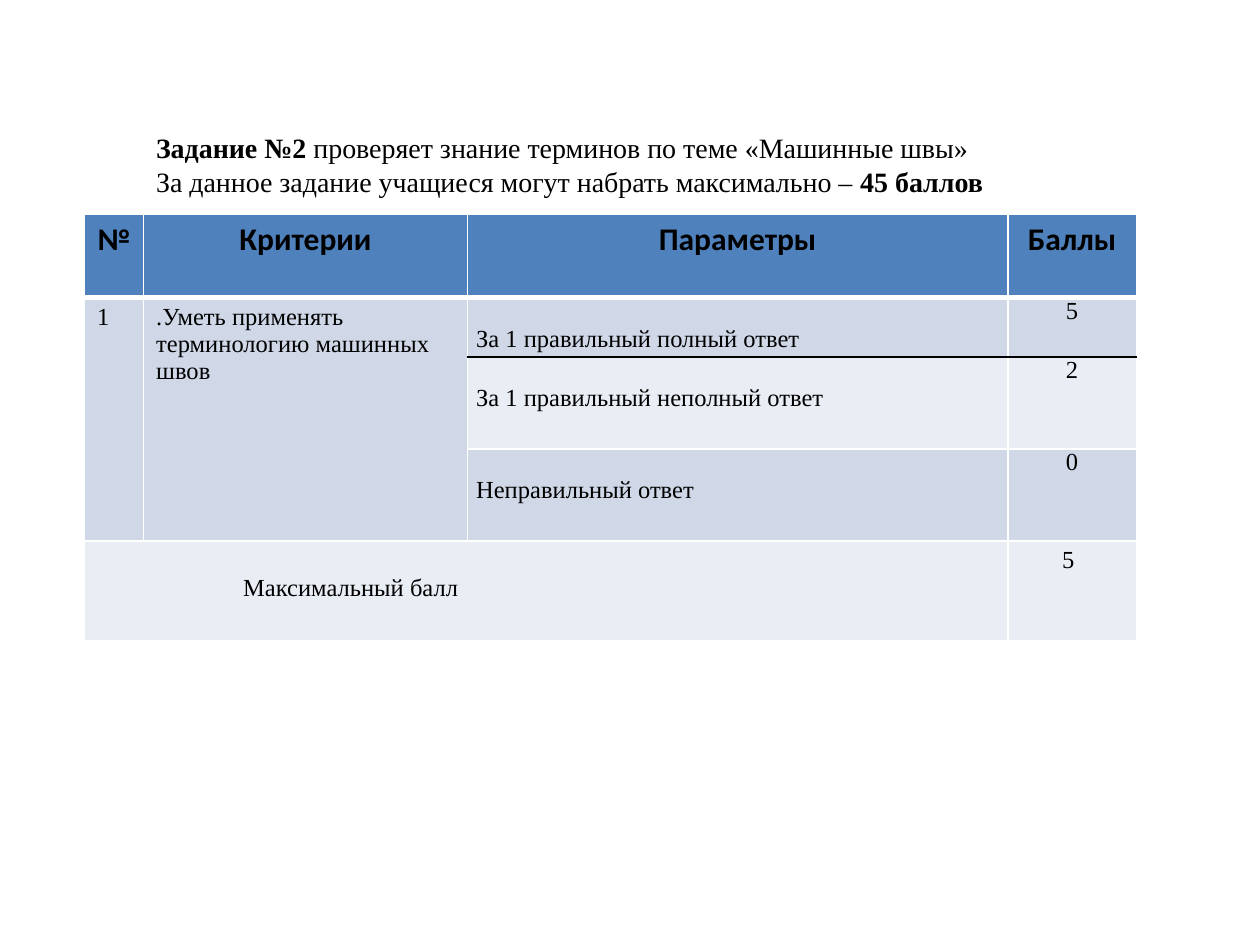
"""Build a slide with the marking scheme for task 2."""
from dataclasses import dataclass
from typing import Any

from lxml import etree
from pptx import Presentation
from pptx import util as u
from pptx.dml.color import RGBColor
from pptx.enum import text
from pptx.oxml.ns import qn


@dataclass(frozen=True)
class Theme:
    ink: str = "000000"
    line: str = "FFFFFF"
    head: str = "4F81BD"
    bands: tuple[str, str] = ("D0D8E8", "E9EDF4")
    serif: str = "Times New Roman"
    sans: str = "Calibri"
    lead: int = 16
    top: int = 18
    body: int = 14


@dataclass(frozen=True)
class Pad:
    left: float = 0.1
    top: float = 0.05
    right: float = 0.1
    base: float = 0.05


@dataclass(frozen=True)
class Item:
    row: int
    col: int
    words: str
    pad: Pad = Pad()
    mid: bool = False
    rows: int = 1
    cols: int = 1


THEME = Theme()
WIDE, HIGH = 10, 7.5
COLS = (0.47, 2.57, 4.29, 1.02)
ROWS = (0.66, 0.47, 0.73, 0.73, 0.79)
LEFT, TOP = 0.067, 0.227
DROP = Pad(0.07, 0.22, 0.07, 0)
TIGHT = Pad(0.07, 0, 0.07, 0)
HEADS = ("№", "Критерии", "Параметры", "Баллы")
MARKS = (
    ("За 1 правильный полный ответ", "5"),
    ("За 1 правильный неполный ответ", "2"),
    ("Неправильный ответ", "0"),
)
LEAD = (
    (("Задание №2", True), (" проверяет знание терминов по теме «Машинные швы»", False)),
    (("За данное задание учащиеся могут набрать максимально – ", False), ("45 баллов", True)),
)
ITEMS = (
    *(Item(0, col, words, mid=True) for col, words in enumerate(HEADS)),
    Item(1, 0, "1", rows=3),
    Item(1, 1, ".Уметь применять терминологию машинных швов", rows=3),
    *(Item(row, 2, pair[0], DROP) for row, pair in enumerate(MARKS, 1)),
    *(Item(row, 3, pair[1], TIGHT, True) for row, pair in enumerate(MARKS, 1)),
    Item(4, 0, "Максимальный балл", Pad(1.26, 0.27), cols=3),
    Item(4, 3, "5", Pad(0.43)),
)


def style(font: Any, face: str, size: int) -> None:
    """Set the face, size and ink of a font."""
    font.name, font.size = face, u.Pt(size)
    font.color.rgb = RGBColor.from_string(THEME.ink)


def edge(row: int, col: int) -> tuple[str, int]:
    """Give the colour and width of the line below a row."""
    if row == 0:
        return THEME.line, 3
    return (THEME.ink if row == 1 and col > 1 else THEME.line), 1


def rule(cell: Any, side: str, hue: str, width: int) -> None:
    """Draw one border of a cell."""
    line = etree.SubElement(cell._tc.get_or_add_tcPr(), qn(f"a:ln{side}"), w=str(u.Pt(width)))
    fill = etree.SubElement(line, qn("a:solidFill"))
    etree.SubElement(fill, qn("a:srgbClr"), val=hue)


def paint(cell: Any, row: int, col: int) -> None:
    """Give a cell its borders and fill."""
    plain = (THEME.line, 1)
    above = edge(row - 1, col) if row else plain
    for side, look in zip("LRTB", (plain, plain, above, edge(row, col))):
        rule(cell, side, *look)
    cell.fill.solid()
    hue = THEME.bands[(row - 1) % 2] if row else THEME.head
    cell.fill.fore_color.rgb = RGBColor.from_string(hue)


def write(table: Any, item: Item) -> None:
    """Put one item into its cell, merging where it spans."""
    cell = table.cell(item.row, item.col)
    if item.rows * item.cols > 1:
        cell.merge(table.cell(item.row + item.rows - 1, item.col + item.cols - 1))
    pad = item.pad
    cell.margin_left, cell.margin_top = u.Inches(pad.left), u.Inches(pad.top)
    cell.margin_right, cell.margin_bottom = u.Inches(pad.right), u.Inches(pad.base)
    cell.text = item.words
    para = cell.text_frame.paragraphs[0]
    para.alignment = text.PP_ALIGN.CENTER if item.mid else text.PP_ALIGN.LEFT
    head = item.row == 0
    style(para.font, THEME.sans if head else THEME.serif, THEME.top if head else THEME.body)
    para.font.bold = head


def intro(slide: Any) -> None:
    """Write the two lines above the table."""
    box = slide.shapes.add_textbox(
        u.Inches(0.114 * WIDE), u.Inches(0.132 * HIGH), u.Inches(0.717 * WIDE), u.Inches(0.085 * HIGH)
    )
    frame = box.text_frame
    frame.word_wrap = True
    for spot, parts in enumerate(LEAD):
        para = frame.add_paragraph() if spot else frame.paragraphs[0]
        style(para.font, THEME.serif, THEME.lead)
        for words, bold in parts:
            run = para.add_run()
            run.text, run.font.bold = words, bold


def grid(slide: Any) -> None:
    """Build the table of criteria and marks."""
    table = slide.shapes.add_table(
        len(ROWS), len(COLS), u.Inches(LEFT * WIDE), u.Inches(TOP * HIGH),
        u.Inches(sum(COLS)), u.Inches(sum(ROWS)),
    ).table
    table.first_row = table.horz_banding = False
    for col, width in enumerate(COLS):
        table.columns[col].width = u.Inches(width)
    for row, height in enumerate(ROWS):
        table.rows[row].height = u.Inches(height)
        for col in range(len(COLS)):
            paint(table.cell(row, col), row, col)
    for item in ITEMS:
        write(table, item)


def main() -> None:
    """Make the deck and save it."""
    deck = Presentation()
    deck.slide_width, deck.slide_height = u.Inches(WIDE), u.Inches(HIGH)
    slide = deck.slides.add_slide(deck.slide_layouts[6])
    intro(slide)
    grid(slide)
    deck.save("out.pptx")


if __name__ == "__main__":
    main()
